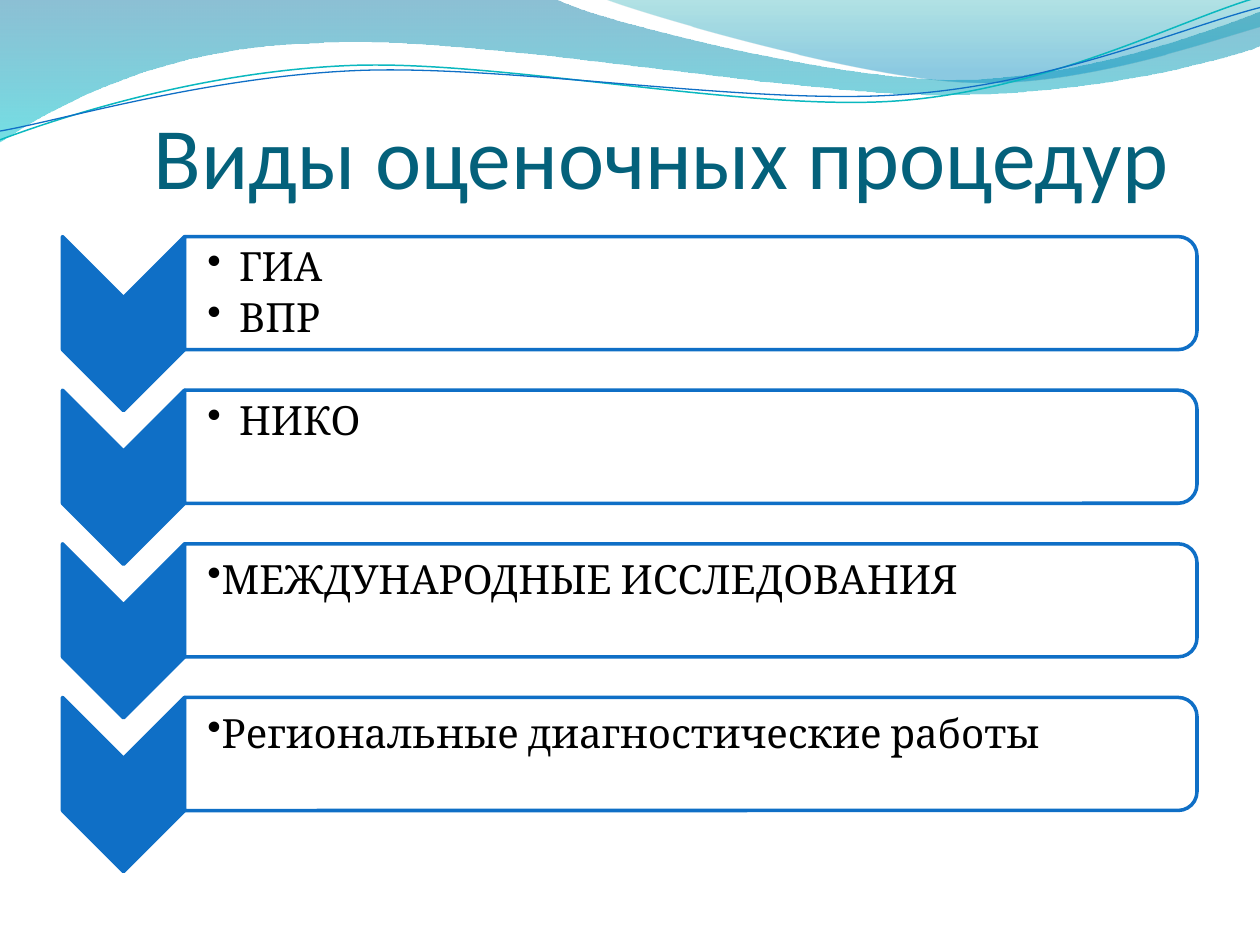
from dataclasses import dataclass
from math import cos, radians, sin

from lxml.etree import SubElement
from pptx import Presentation
from pptx.dml.color import RGBColor as Rgb
from pptx.enum.shapes import MSO_SHAPE as Kind
from pptx.enum.text import MSO_ANCHOR as Anchor, PP_ALIGN as Align
from pptx.oxml.ns import qn
from pptx.util import Cm, Pt


@dataclass(frozen=True)
class Theme:
    """Colours, fonts and type sizes of the slide."""
    blue: str = "0F6FC6"
    teal: str = "0AB8BF"
    white: str = "FFFFFF"
    ink: str = "000000"
    title: str = "04617B"
    low: tuple = (("0074A1", 45, 0), ("00C6CF", 55, 1))
    high: tuple = (("00A1A9", 30, 0), ("008BBF", 45, 0.8))
    head: str = "Calibri"
    body: str = "Cambria"
    big: int = 50
    text: int = 23


LOOK = Theme()
UNIT = 2.54
TILT = -2.7
PIVOT = (4.99, 0.58)
TITLE = "Виды оценочных процедур"
ROWS = [
    (["ГИА", "ВПР"], True),
    (["НИКО"], True),
    (["МЕЖДУНАРОДНЫЕ ИССЛЕДОВАНИЯ"], False),
    (["Региональные диагностические работы"], False),
]
BANDS = [
    ([(0, 0), (4.4, -0.01), (4.76, 0.17, 6.64, 0.63, 7.58, 0.63),
      (8.53, 0.63, 9.58, 0.26, 10, 0.09), (10.01, 0.36),
      (9.83, 0.44, 8.7, 0.76, 7.46, 0.75), (6.22, 0.75, 3.82, 0.28, 2.57, 0.34),
      (1.29, 0.36, 0.46, 0.83, -0.01, 1.13), (0, 0)], LOOK.low),
    ([(4.79, -0.01), (5.09, 0.11, 6.82, 0.62, 7.69, 0.65),
      (8.56, 0.69, 9.61, 0.32, 10, 0.21), (10, 0), (4.79, -0.01)], LOOK.high),
]
LINES = [
    ([(0, 1.11), (0.48, 0.93, 1.58, 0.57, 2.77, 0.52),
      (3.95, 0.47, 5.93, 0.89, 7.13, 0.8),
      (8.33, 0.71, 9.38, 0.15, 9.98, -0.02)], LOOK.teal, 0.85),
    ([(0, 1.04), (0.47, 0.96, 1.64, 0.61, 2.83, 0.56),
      (4.03, 0.51, 5.97, 0.84, 7.17, 0.75),
      (8.36, 0.67, 9.41, 0.21, 10, 0.06)], LOOK.blue, 0.75),
]


def level(spot, angle):
    """Turn a point about the pivot by an angle in degrees."""
    dx, dy = spot[0] - PIVOT[0], spot[1] - PIVOT[1]
    c, s = cos(radians(angle)), sin(radians(angle))
    return PIVOT[0] + dx * c - dy * s, PIVOT[1] + dx * s + dy * c


def fade(shape, shares):
    """Set the opacity of each fill colour in percent."""
    for color, share in zip(shape.element.spPr.iter(qn("a:srgbClr")), shares):
        SubElement(color, qn("a:alpha"), val=str(share * 1000))


def bend(shape, parts):
    """Merge each run of three straight parts into one cubic curve."""
    legs = iter(list(shape.element.spPr.iter(qn("a:lnTo"))))
    for part in parts:
        leg = next(legs)
        if len(part) == 6:
            leg.tag = qn("a:cubicBezTo")
            for _ in range(2):
                extra = next(legs)
                leg.append(extra[0])
                extra.getparent().remove(extra)


def draw(slide, box, path, close, tilt=0):
    """Add a curved outline relative to the box."""
    pairs = [part[k:k + 2] for part in path for k in range(0, len(part), 2)]
    spots = [tuple(Cm(v * UNIT) for v in level(pair, -tilt)) for pair in pairs]
    pen = slide.shapes.build_freeform(*spots[0])
    pen.add_line_segments(spots[1:], close=close)
    shape = pen.convert_to_shape(Cm(box[0]), Cm(box[1]))
    bend(shape, path[1:])
    shape.rotation = tilt
    shape.shadow.inherit = False
    return shape


def add_waves(slide, box):
    """Draw the shaded bands and thin curves at the top."""
    for path, stops in BANDS:
        band = draw(slide, box, path, True)
        band.line.fill.background()
        band.fill.gradient()
        band.fill.gradient_angle = 270
        for stop, (color, _, place) in zip(band.fill.gradient_stops, stops):
            stop.color.rgb = Rgb.from_string(color)
            stop.position = place
        fade(band, [share for _, share, _ in stops])
    for path, color, width in LINES:
        curve = draw(slide, box, path, False, TILT)
        curve.fill.background()
        curve.line.color.rgb = Rgb.from_string(color)
        curve.line.width = Pt(width)


def style(para, font, size, color):
    """Format every run of a paragraph."""
    for run in para.runs:
        run.font.name = font
        run.font.size = Pt(size)
        run.font.color.rgb = Rgb.from_string(color)


def inset(frame, left, top, right, bottom):
    """Set the four margins of a text frame."""
    frame.margin_left, frame.margin_top = Cm(left), Cm(top)
    frame.margin_right, frame.margin_bottom = Cm(right), Cm(bottom)


def add_title(slide, box):
    """Place and format the title."""
    title = slide.shapes.title
    title.left, title.top, title.width, title.height = map(Cm, box)
    frame = title.text_frame
    frame.text = TITLE
    frame.vertical_anchor = Anchor.BOTTOM
    inset(frame, 0, 0.13, 0, 0)
    para = frame.paragraphs[0]
    para.alignment = Align.CENTER
    style(para, LOOK.head, LOOK.big, LOOK.title)


def turn(slide, kind, box, fill):
    """Add a shape turned by a quarter that covers the box."""
    x, y, w, h = box
    shift = (w - h) / 2
    shape = slide.shapes.add_shape(kind, Cm(x + shift), Cm(y - shift), Cm(h), Cm(w))
    shape.rotation = 90
    shape.shadow.inherit = False
    shape.fill.solid()
    shape.fill.fore_color.rgb = Rgb.from_string(fill)
    shape.line.color.rgb = Rgb.from_string(LOOK.blue)
    shape.line.width = Pt(2)
    return shape


def add_items(slide, box, items, hang):
    """Write the bulleted items of one row."""
    frame = slide.shapes.add_textbox(*map(Cm, box)).text_frame
    frame.word_wrap = True
    frame.vertical_anchor = Anchor.TOP
    inset(frame, 0.46, 0.1, 0.05, 0.05)
    frame.text = "\n".join(items)
    dent = Cm(0.64) if hang else 0
    for para in frame.paragraphs:
        para.level = 1
        if hang:
            para.line_spacing = 0.9
            para.space_after = Pt(4)
        style(para, LOOK.body, LOOK.text, LOOK.ink)
        props = para._p.get_or_add_pPr()
        props.set("marL", str(dent))
        props.set("indent", str(-dent))
        SubElement(props, qn("a:buChar"), char="••")


def add_row(slide, box, items, hang):
    """Draw one chevron with its bar and items."""
    x, y, w, h = box
    arrow, bar = 2.46, 2.28
    turn(slide, Kind.CHEVRON, (x, y, arrow, h), LOOK.blue)
    plate = turn(slide, Kind.ROUND_2_SAME_RECTANGLE, (x + arrow, y, w - arrow, bar), LOOK.white)
    fade(plate, [90])
    add_items(slide, (x + arrow, y + 0.11, w - arrow - 0.11, 2.06), items, hang)


def add_list(slide, box):
    """Stack the rows at equal steps."""
    x, y, w, h = box
    arrow = 3.51
    step = (h - arrow) / (len(ROWS) - 1)
    for place, (items, hang) in enumerate(ROWS):
        add_row(slide, (x, y + place * step, w, arrow), items, hang)


def main():
    """Build and save the slide."""
    deck = Presentation()
    deck.slide_width, deck.slide_height = Cm(25.4), Cm(19.05)
    slide = deck.slides.add_slide(deck.slide_layouts[5])
    add_waves(slide, (0, 0))
    add_title(slide, (1.27, 1.57, 24.13, 2.6))
    add_list(slide, (1.26, 4.77, 22.87, 12.8))
    deck.save("out.pptx")


if __name__ == "__main__":
    main()
